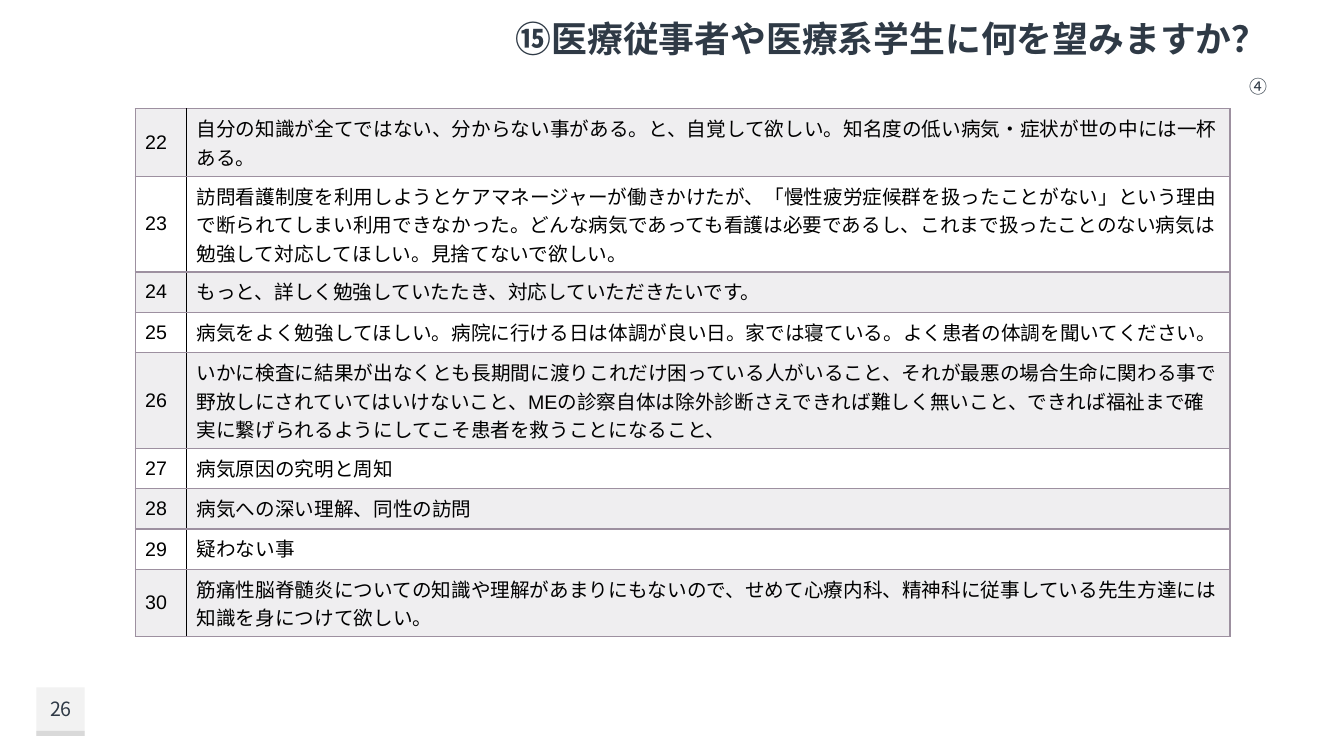
"""Build the survey-answer slide with its table of replies 22 to 30."""
from lxml import etree
from pptx import Presentation
from pptx.dml.color import RGBColor
from pptx.enum import shapes, text
from pptx.oxml import ns
from pptx.util import Inches, Pt

TITLE = "⑮医療従事者や医療系学生に何を望みますか？"
PART = "④"
PAGE = "26"
FIRST_NUMBER = 22
ANSWERS = [
    "自分の知識が全てではない、分からない事がある。と、自覚して欲しい。知名度の低い病気・症状が世の中には一杯ある。",
    "訪問看護制度を利用しようとケアマネージャーが働きかけたが、「慢性疲労症候群を扱ったことがない」という理由で断られてしまい利用できなかった。どんな病気であっても看護は必要であるし、これまで扱ったことのない病気は勉強して対応してほしい。見捨てないで欲しい。",
    "もっと、詳しく勉強していたたき、対応していただきたいです。",
    "病気をよく勉強してほしい。病院に行ける日は体調が良い日。家では寝ている。よく患者の体調を聞いてください。",
    "いかに検査に結果が出なくとも長期間に渡りこれだけ困っている人がいること、それが最悪の場合生命に関わる事で野放しにされていてはいけないこと、MEの診察自体は除外診断さえできれば難しく無いこと、できれば福祉まで確実に繋げられるようにしてこそ患者を救うことになること、",
    "病気原因の究明と周知",
    "病気への深い理解、同性の訪問",
    "疑わない事",
    "筋痛性脳脊髄炎についての知識や理解があまりにもないので、せめて心療内科、精神科に従事している先生方達には知識を身につけて欲しい。",
]
JP_FONT = "Noto Sans CJK JP"
DARK, BLACK, MAUVE = "2F3A46", "000000", "9D90A0"
BANDS = ["EFEEF0", "FFFFFF"]
COLUMNS = [0.51, 10.35]
ROW_HEIGHT = 0.4
BADGE = [(6.82, 0.48, "F2F2F2"), (7.25, 0.05, "D9D9D9")]


def rgb(color):
    return RGBColor.from_string(color)


def write(tf, words, size, color=DARK, font=JP_FONT, bold=False, small=False, align=None):
    p = tf.paragraphs[0]
    p.alignment = align
    r = p.add_run()
    r.text = words
    r.font.size, r.font.name, r.font.bold = Pt(size), font, bold
    r.font.color.rgb = rgb(color)
    props = r._r.get_or_add_rPr()
    etree.SubElement(props, ns.qn("a:ea"), typeface=JP_FONT)
    if small:
        props.set("cap", "small")


def place(sp, left, top, width, height):
    sp.left, sp.top, sp.width, sp.height = map(Inches, (left, top, width, height))
    tf = sp.text_frame
    tf.word_wrap = True
    tf.auto_size = text.MSO_AUTO_SIZE.NONE
    tf.vertical_anchor = text.MSO_ANCHOR.MIDDLE
    return tf


def set_borders(cell, left, right):
    props = cell._tc.get_or_add_tcPr()
    sides = [("a:lnL", left), ("a:lnR", right), ("a:lnT", MAUVE), ("a:lnB", MAUVE)]
    for i, (side, color) in enumerate(sides):
        line = etree.Element(ns.qn(side), w=str(Pt(1)))
        fill = etree.SubElement(line, ns.qn("a:solidFill"))
        etree.SubElement(fill, ns.qn("a:srgbClr"), val=color)
        props.insert(i, line)


def add_answers(s):
    frame = s.shapes.add_table(len(ANSWERS), len(COLUMNS), Inches(1.34), Inches(1.08),
                               Inches(sum(COLUMNS)), Inches(ROW_HEIGHT * len(ANSWERS)))
    table = frame.table
    for column, width in zip(table.columns, COLUMNS):
        column.width = Inches(width)
    for i, answer in enumerate(ANSWERS):
        table.rows[i].height = Inches(ROW_HEIGHT)
        number, reply = table.rows[i].cells
        number.vertical_anchor = text.MSO_ANCHOR.MIDDLE
        reply_font = "Calibri" if i == len(ANSWERS) - 1 else "Arial"
        write(number.text_frame, str(FIRST_NUMBER + i), 14, BLACK, "Arial")
        write(reply.text_frame, answer, 14, BLACK, reply_font)
        for cell in (number, reply):
            cell.fill.solid()
            cell.fill.fore_color.rgb = rgb(BANDS[i % 2])
        set_borders(number, MAUVE, BLACK)
        set_borders(reply, BLACK, MAUVE)


def main():
    prs = Presentation()
    prs.slide_width, prs.slide_height = Inches(13.33), Inches(7.5)
    s = prs.slides.add_slide(prs.slide_layouts[5])
    right, center = text.PP_ALIGN.RIGHT, text.PP_ALIGN.CENTER

    for top, height, color in BADGE:
        sp = s.shapes.add_shape(shapes.MSO_SHAPE.RECTANGLE, Inches(0.36), Inches(top),
                                Inches(0.48), Inches(height))
        sp.shadow.inherit = False
        sp.fill.solid()
        sp.fill.fore_color.rgb = rgb(color)
        sp.line.fill.background()

    title = place(s.shapes.title, 2.18, 0, 10.49, 0.68)
    write(title, TITLE, 32, bold=True, small=True, align=right)
    part = place(s.shapes.add_textbox(0, 0, 0, 0), 2.18, 0.68, 10.49, 0.31)
    write(part, PART, 16, small=True, align=right)
    page = place(s.shapes.add_textbox(0, 0, 0, 0), 0.29, 6.82, 0.63, 0.43)
    write(page, PAGE, 14, align=center)
    add_answers(s)
    prs.save("out.pptx")


if __name__ == "__main__":
    main()
